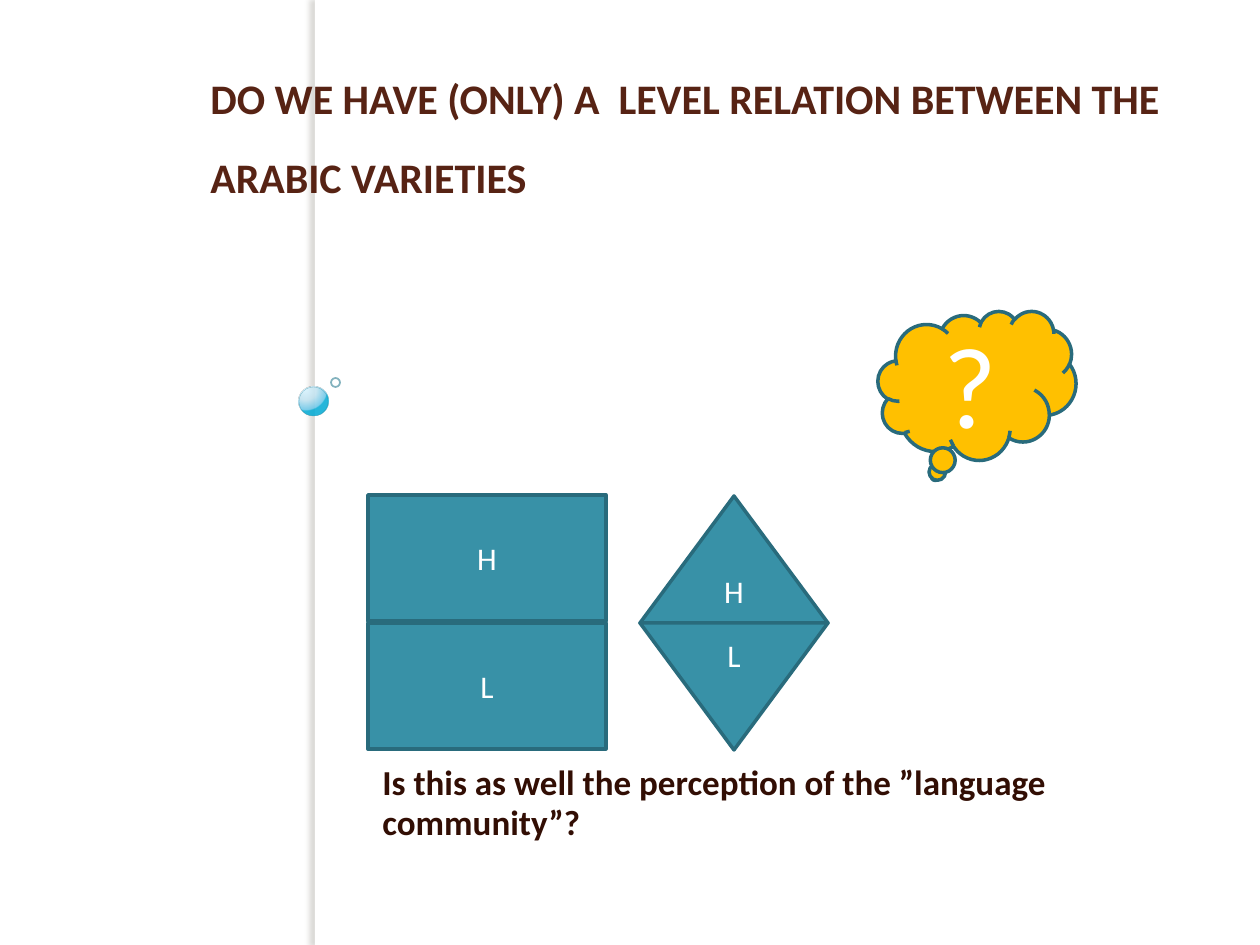
from pptx import Presentation
from pptx.dml.color import RGBColor
from pptx.enum.shapes import MSO_SHAPE
from pptx.enum.text import MSO_ANCHOR, PP_ALIGN
from pptx.oxml import parse_xml
from pptx.oxml.ns import nsdecls, qn
from pptx.util import Emu, Pt
from lxml import etree

RECT, OVAL = MSO_SHAPE.RECTANGLE, MSO_SHAPE.OVAL
UP, DOWN = MSO_SHAPE.FLOWCHART_EXTRACT, MSO_SHAPE.FLOWCHART_MERGE
CLOUD = MSO_SHAPE.CLOUD_CALLOUT
TOP, MIDDLE, BOTTOM = MSO_ANCHOR.TOP, MSO_ANCHOR.MIDDLE, MSO_ANCHOR.BOTTOM
PX = 914400 / 126
TEAL, DARK_TEAL, WHITE = "3891A7", "296B7C", "FFFFFF"


def add_shape(parent, kind, bounds, fill=None, line=None, width=2, opacity=100):
    shape = parent.shapes.add_shape(kind, *[Emu(round(n * PX)) for n in bounds])
    shape.shadow.inherit = False
    if fill:
        shape.fill.solid()
        shape.fill.fore_color.rgb = RGBColor.from_string(fill)
    else:
        shape.fill.background()
    if line:
        shape.line.color.rgb = RGBColor.from_string(line)
        shape.line.width = Pt(width)
        if opacity < 100:
            color = shape.line._get_or_add_ln().find(".//" + qn("a:srgbClr"))
            etree.SubElement(color, qn("a:alpha"), val=str(opacity * 1000))
    else:
        shape.line.fill.background()
    return shape


def write(box, text, size, color, anchor=MIDDLE, align=PP_ALIGN.CENTER, bold=False):
    frame = box.text_frame
    frame.word_wrap = True
    frame.vertical_anchor = anchor
    para = frame.paragraphs[0]
    para.text = text
    para.alignment = align
    para.font.name = "Calibri"
    para.font.size = Pt(size)
    para.font.bold = bold
    para.font.color.rgb = RGBColor.from_string(color)
    return para


deck = Presentation()
deck.slide_width, deck.slide_height = Emu(round(1260 * PX)), Emu(round(945 * PX))
page = deck.slides.add_slide(deck.slide_layouts[6])

# Vertical band with a soft shadow to its left
band = add_shape(page, RECT, (315, 0, 10, 945), WHITE)
effects = band._element.spPr.find(qn("a:effectLst"))
effects.append(parse_xml(
    f'<a:outerShdw {nsdecls("a")} blurRad="{Pt(3)}" dist="{Pt(3)}" dir="10800000" '
    'algn="tl" rotWithShape="0"><a:srgbClr val="736F63"><a:alpha val="25000"/>'
    '</a:srgbClr></a:outerShdw>'))

# Bubbles on the band
bubble = add_shape(page, OVAL, (299, 387, 29, 29), None, "308EA5", 0.16, 60)
stops = "".join(
    f'<a:gs pos="{place * 1000}"><a:srgbClr val="{color}">'
    f'<a:alpha val="{opacity * 1000}"/></a:srgbClr></a:gs>'
    for place, color, opacity in (
        (0, "DAF4FF", 95), (50, "C3E3F0", 90), (95, "6BC7E8", 88), (100, "00ABD5", 85)))
properties = bubble._element.spPr
properties.replace(properties.find(qn("a:noFill")), parse_xml(
    f'<a:gradFill {nsdecls("a")} rotWithShape="1"><a:gsLst>{stops}</a:gsLst>'
    '<a:path path="circle"><a:fillToRect l="25000" t="12000" r="75000" b="88000"/>'
    '</a:path></a:gradFill>'))
add_shape(page, OVAL, (331, 378, 9, 9), None, "318093", 1, 60)

# High and low varieties: stacked boxes, then stacked triangles
for kinds, left, top, width, height, step in (
        ((RECT, RECT), 368, 495, 238, 126, 128),
        ((UP, DOWN), 640, 496, 188, 127, 127)):
    pair = page.shapes.add_group_shape()
    for row, (kind, level) in enumerate(zip(kinds, "HL")):
        bounds = (left, top + row * step, width, height)
        write(add_shape(pair, kind, bounds, TEAL, DARK_TEAL), level, 18, WHITE)

cloud = add_shape(page, CLOUD, (878, 311, 198, 149), "FFC000", DARK_TEAL)
cloud.adjustments[0], cloud.adjustments[1] = -0.21, 0.61
write(cloud, "?", 66, WHITE)

for text, bounds, size, color, anchor, spacing, indent in (
        ("Is this as well the perception of the ”language community”?",
         (368, 762, 882, 87), 20, "320E04", BOTTOM, 23, 2),
        ("DO WE HAVE (ONLY) A  LEVEL RELATION BETWEEN THE ARABIC VARIETIES",
         (198, 38, 1033, 157), 24, "572314", TOP, 45, 0)):
    box = page.shapes.add_textbox(*[Emu(round(n * PX)) for n in bounds])
    para = write(box, text, size, color, anchor, PP_ALIGN.LEFT, True)
    para.line_spacing = Pt(spacing)
    para._p.get_or_add_pPr().set("marL", str(round(indent * PX)))

deck.save("out.pptx")
